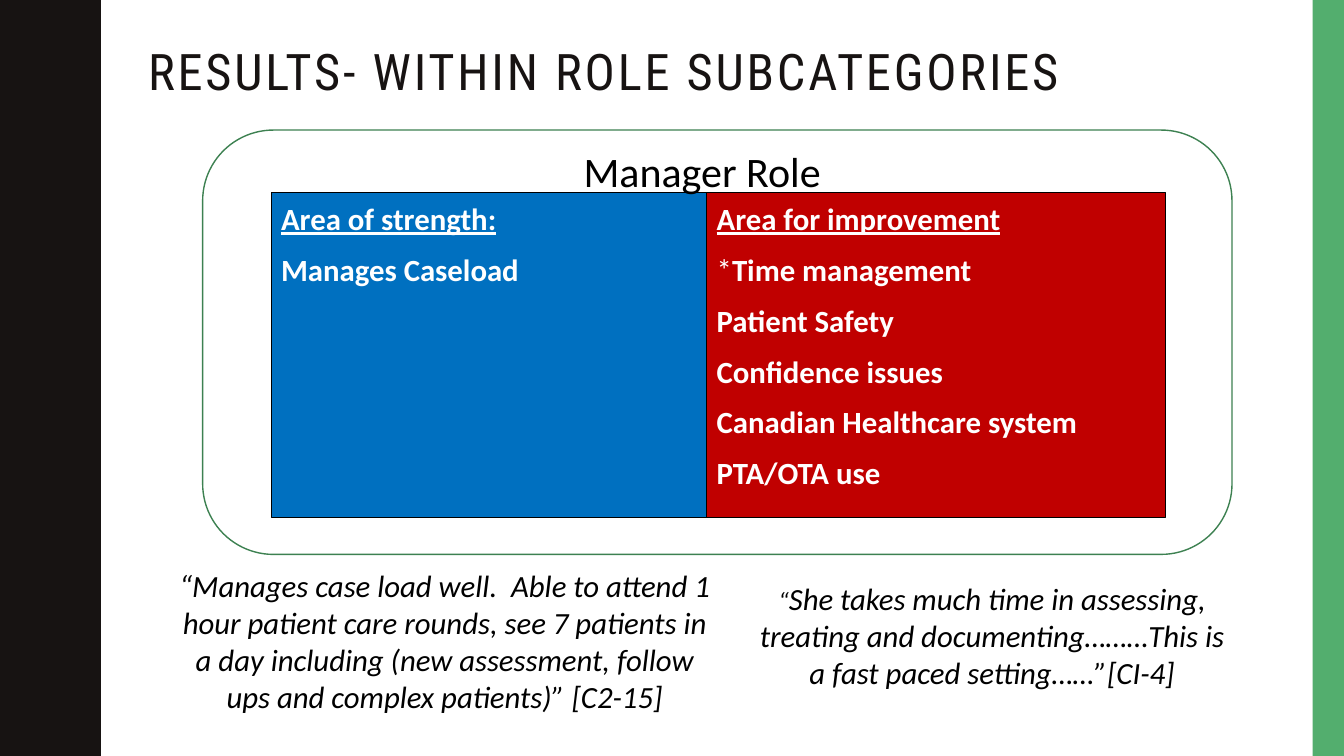
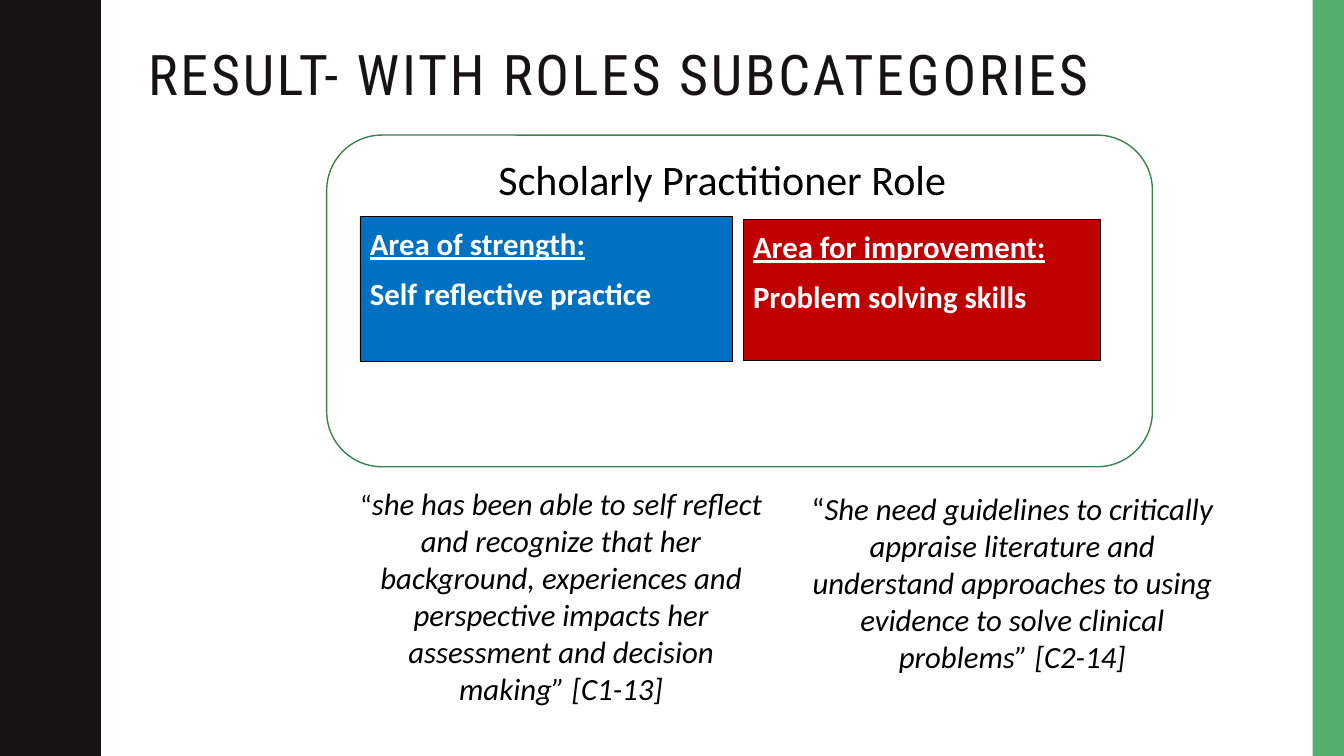
from dataclasses import dataclass

from pptx import Presentation
from pptx.dml.color import RGBColor
from pptx.enum.shapes import MSO_SHAPE as Preset
from pptx.enum.text import MSO_ANCHOR as Anchor, PP_ALIGN as Align
from pptx.util import Inches, Pt

WIDTH, HEIGHT = 13.33, 7.5
INK, GREEN, OUTLINE = "171312", "53AE6E", "3D8151"
BLUE, RED, BLACK, WHITE = "0070C0", "C00000", "000000", "FFFFFF"
TITLE_FONT, BODY_FONT = "Roboto Condensed", "Calibri"
BODY_SIZE, HEADING_SIZE = 22, 30

# Half a wave of the left band: (x, y) in inches, mirrored for the other half
HALF_WAVE = [
    (0.78, 0), (0.78, 0.07), (0.79, 0.14), (0.8, 0.2), (0.81, 0.25),
    (0.83, 0.29), (0.85, 0.33), (0.87, 0.38), (0.89, 0.42), (0.91, 0.46),
    (0.93, 0.5), (0.95, 0.55), (0.96, 0.61), (0.97, 0.68), (0.97, 0.75),
]
WAVE_LENGTH, WAVE_COUNT = 1.5, 5


@dataclass
class Box:
    left: float
    top: float
    width: float
    height: float

    def inner(self, left, top, width, height):
        """Box inside this one, given in percent of its size."""
        return Box(self.left + self.width * left / 100,
                   self.top + self.height * top / 100,
                   self.width * width / 100, self.height * height / 100)

    def lengths(self):
        return [Inches(n) for n in (self.left, self.top, self.width, self.height)]


PAGE = Box(0, 0, WIDTH, HEIGHT)


def color(value):
    return RGBColor.from_string(value)


def paint(shape, fill=None, line=None, weight=1):
    shape.shadow.inherit = False
    if fill:
        shape.fill.solid()
        shape.fill.fore_color.rgb = color(fill)
    else:
        shape.fill.background()
    if line:
        shape.line.color.rgb = color(line)
        shape.line.width = Pt(weight)
    else:
        shape.line.fill.background()


def add_preset(page, preset, box, **style):
    shape = page.shapes.add_shape(preset, *box.lengths())
    paint(shape, **style)
    return shape


def add_span(para, text, size=BODY_SIZE, ink=BLACK, font=BODY_FONT,
             bold=False, italic=False, underline=False):
    span = para.add_run()
    span.text = text
    span.font.size, span.font.name = Pt(size), font
    span.font.color.rgb = color(ink)
    span.font.bold, span.font.italic = bold, italic
    span.font.underline = underline
    return span


def set_para(para, align=Align.LEFT, spacing=1.0, after=0):
    para.alignment, para.line_spacing = align, spacing
    para.space_after = Pt(after)


def add_text_box(page, box, **layout):
    """Add a wrapping text box and return its first paragraph."""
    frame = page.shapes.add_textbox(*box.lengths()).text_frame
    frame.word_wrap = True
    frame.vertical_anchor = Anchor.TOP
    set_para(frame.paragraphs[0], **layout)
    return frame.paragraphs[0]


def add_bands(page):
    # Wavy band on the left
    points = []
    for number in range(WAVE_COUNT):
        start = number * WAVE_LENGTH
        points += [(x, start + y) for x, y in HALF_WAVE]
        points += [(x, start + WAVE_LENGTH - y) for x, y in HALF_WAVE[-2::-1]]
    points.append((0, HEIGHT))
    builder = page.shapes.build_freeform(0, 0, scale=Inches(1))
    builder.add_line_segments(points, close=True)
    paint(builder.convert_to_shape(), fill=INK)
    # Straight band on the right
    add_preset(page, Preset.RECTANGLE, PAGE.inner(97.67, 0, 2.33, 100), fill=GREEN)


def add_title(page, text, size):
    para = add_text_box(page, PAGE.inner(10.28, 5.6, 86, 9.2), spacing=0.9)
    span = add_span(para, text, size, INK, TITLE_FONT)
    span.font._element.set("spc", "200")


def add_area(page, box, fill, heading, items):
    """Coloured box with an underlined heading and bold items."""
    frame = add_preset(page, Preset.RECTANGLE, box, fill=fill,
                       line=BLACK, weight=0.5).text_frame
    frame.word_wrap = True
    frame.vertical_anchor = Anchor.TOP
    for index, text in enumerate([heading, *items]):
        para = frame.add_paragraph() if index else frame.paragraphs[0]
        set_para(para, spacing=1.07, after=8)
        if text.startswith("*"):
            add_span(para, "*", ink=WHITE)
            text = text[1:]
        add_span(para, text, ink=WHITE, bold=True, underline=index == 0)


def add_role(page, box, role, role_place, areas):
    """Rounded panel; its contents are placed in percent of the panel."""
    add_preset(page, Preset.ROUNDED_RECTANGLE, box, line=OUTLINE)
    for place, fill, heading, items in areas:
        add_area(page, box.inner(*place), fill, heading, items)
    para = add_text_box(page, box.inner(*role_place), align=Align.CENTER,
                        spacing=1.07, after=8)
    add_span(para, role, HEADING_SIZE)


def add_quote(page, box, text, mark_size=BODY_SIZE, mark_italic=False):
    para = add_text_box(page, box, align=Align.CENTER)
    add_span(para, "“", mark_size, italic=mark_italic)
    add_span(para, text, italic=True)


def add_role_slide(deck, title, title_size, panel, role, role_place, areas, quotes):
    page = deck.slides.add_slide(deck.slide_layouts[6])
    add_bands(page)
    add_title(page, title, title_size)
    add_role(page, PAGE.inner(*panel), role, role_place, areas)
    for place, text, mark_size, mark_italic in quotes:
        add_quote(page, PAGE.inner(*place), text, mark_size, mark_italic)


SLIDES = [
    dict(
        title="RESULTS- WITHIN ROLE SUBCATEGORIES", title_size=36,
        panel=(15.08, 17.2, 76.59, 56.13),
        role="Manager Role", role_place=(20.86, 1.66, 55.34, 8.31),
        areas=[
            ((6.66, 14.73, 42.51, 76.48), BLUE, "Area of strength:",
             ["Manages Caseload"]),
            ((48.97, 14.73, 44.56, 76.48), RED, "Area for improvement",
             ["*Time management", "Patient Safety", "Confidence issues",
              "Canadian Healthcare system", "PTA/OTA use"]),
        ],
        quotes=[
            ((12.38, 74.27, 41.41, 21.07),
             "Manages case load well.  Able to attend 1 hour patient care "
             "rounds, see 7 patients in a day including (new assessment, "
             "follow ups and complex patients)” [C2-15]", 22, True),
            ((55.51, 76, 36.61, 16.13),
             "She takes much time in assessing, treating and "
             "documenting………This is a fast paced setting……”[CI-4]", 18, True),
        ],
    ),
    dict(
        title="RESULT- WITH ROLES SUBCATEGORIES", title_size=40,
        panel=(24.31, 17.87, 61.44, 43.87),
        role="Scholarly Practitioner Role", role_place=(16, 3.04, 63.86, 13.68),
        areas=[
            ((4.03, 24.62, 45.05, 43.47), BLUE, "Area of strength:",
             ["Self reflective practice"]),
            ((50.43, 25.53, 43.22, 42.55), RED, "Area for improvement:",
             ["Problem solving skills"]),
        ],
        quotes=[
            ((25.58, 63.47, 32.33, 26),
             "she has been able to self reflect and recognize that her "
             "background, experiences and perspective impacts her assessment "
             "and decision making” [C1-13]", 20, False),
            ((59.34, 64.13, 31.96, 21.07),
             "She need guidelines to critically appraise literature and "
             "understand approaches to using evidence to solve clinical "
             "problems” [C2-14]", 22, False),
        ],
    ),
]


def main():
    deck = Presentation()
    deck.slide_width, deck.slide_height = Inches(WIDTH), Inches(HEIGHT)
    for content in SLIDES:
        add_role_slide(deck, **content)
    deck.save("out.pptx")


if __name__ == "__main__":
    main()
